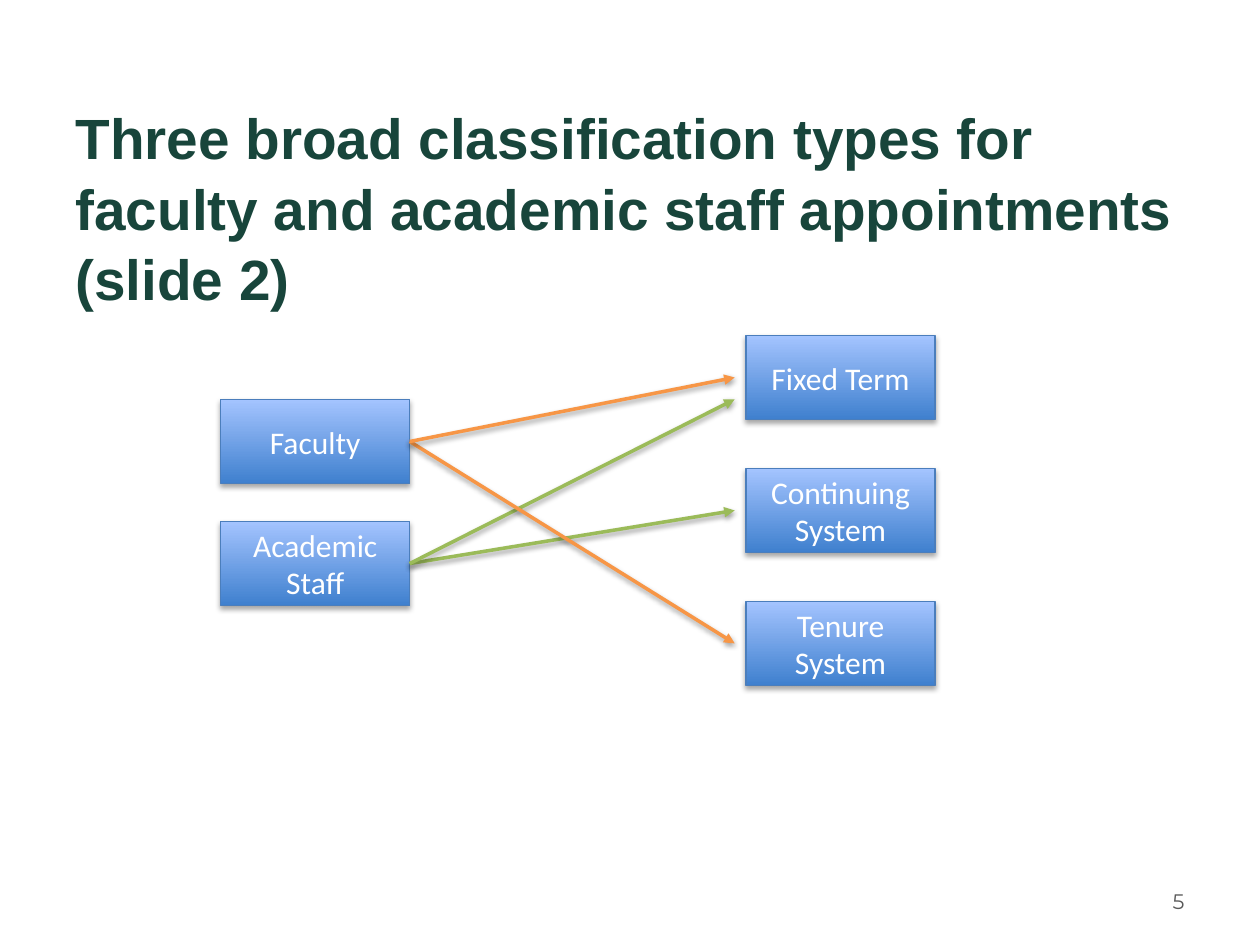
from lxml.etree import SubElement
from pptx import Presentation
from pptx.dml.color import RGBColor
from pptx.enum.shapes import MSO_CONNECTOR as CONNECTOR, MSO_SHAPE as SHAPE
from pptx.enum.text import MSO_ANCHOR as ANCHOR, PP_ALIGN as ALIGN
from pptx.oxml.ns import qn
from pptx.util import Cm, Pt

GREEN_TITLE = RGBColor(0x18, 0x45, 0x3B)
GRAY = RGBColor(0x59, 0x59, 0x59)
WHITE = RGBColor(0xFF, 0xFF, 0xFF)
BLUE_DARK = RGBColor(0x3F, 0x80, 0xCE)
BLUE_LIGHT = RGBColor(0xA4, 0xC4, 0xFF)
BLUE_LINE = RGBColor(0x4B, 0x7E, 0xBC)
ORANGE = RGBColor(0xF7, 0x96, 0x46)
GREEN = RGBColor(0x9B, 0xBB, 0x59)

TITLE = "Three broad classification types for faculty and academic staff appointments (slide 2)"
PAGE_NUMBER = "5"
# left, first top, pitch, labels
COLUMNS = [
    (4.45, 8.05, 2.46, ["Faculty", "Academic Staff"]),
    (15.04, 6.76, 2.68, ["Fixed Term", "Continuing System", "Tenure System"]),
]
ARROWS = [
    ("Academic Staff", "Continuing System", GREEN, 0),
    ("Academic Staff", "Fixed Term", GREEN, 0.44),
    ("Faculty", "Tenure System", ORANGE, 0),
    ("Faculty", "Fixed Term", ORANGE, 0),
]
BOX_WIDTH, BOX_HEIGHT = 3.81, 1.7
ARROW_GAP = 0.23


def add_text(frame, text, font_name, size, color, align, bold=False):
    frame.word_wrap = True
    frame.vertical_anchor = ANCHOR.MIDDLE
    paragraph = frame.paragraphs[0]
    paragraph.alignment = align
    run = paragraph.add_run()
    run.text = text
    run.font.name = font_name
    run.font.size = Pt(size)
    run.font.bold = bold
    run.font.color.rgb = color
    return paragraph


def add_shadow(shape, distance, opacity):
    effects = SubElement(shape._element.spPr, qn("a:effectLst"))
    shadow = SubElement(effects, qn("a:outerShdw"), blurRad=str(Pt(3.1)),
                        dist=str(Pt(distance)), dir="5400000", rotWithShape="0")
    black = SubElement(shadow, qn("a:srgbClr"), val="000000")
    SubElement(black, qn("a:alpha"), val=str(opacity * 1000))


def add_box(slide, label, left, top):
    box = slide.shapes.add_shape(SHAPE.FLOWCHART_PROCESS, Cm(left), Cm(top),
                                 Cm(BOX_WIDTH), Cm(BOX_HEIGHT))
    box.fill.gradient()
    box.fill.gradient_angle = 90
    for stop, color in zip(box.fill.gradient_stops, (BLUE_DARK, BLUE_LIGHT)):
        stop.color.rgb = color
    box.line.color.rgb = BLUE_LINE
    box.line.width = Pt(0.75)
    add_shadow(box, 1.8, 35)
    add_text(box.text_frame, label, "Calibri", 18, WHITE, ALIGN.CENTER)
    return box


def add_arrow(slide, source, target, color, offset):
    end_y = target.top + target.height // 2 + Cm(offset)
    arrow = slide.shapes.add_connector(CONNECTOR.STRAIGHT, source.left + source.width, source.top,
                                       target.left - Cm(ARROW_GAP), end_y)
    arrow.begin_connect(source, 3)
    arrow.line.color.rgb = color
    arrow.line.width = Pt(2)
    SubElement(arrow.line._get_or_add_ln(), qn("a:tailEnd"), type="triangle")
    add_shadow(arrow, 1.6, 38)


def main():
    presentation = Presentation()
    presentation.slide_width, presentation.slide_height = Cm(25.4), Cm(19.05)
    slide = presentation.slides.add_slide(presentation.slide_layouts[5])

    title = slide.shapes.title
    title.left, title.top, title.width, title.height = Cm(1.27), Cm(3.48), Cm(22.86), Cm(1.35)
    heading = add_text(title.text_frame, TITLE, "Arial", 32.4, GREEN_TITLE, ALIGN.LEFT, bold=True)
    heading.line_spacing = 1.04

    number = slide.shapes.add_textbox(Cm(18.21), Cm(17.65), Cm(5.92), Cm(1.02))
    add_text(number.text_frame, PAGE_NUMBER, "Montserrat", 12, GRAY, ALIGN.RIGHT)

    boxes = {}
    for left, first_top, pitch, labels in COLUMNS:
        for row, label in enumerate(labels):
            boxes[label] = add_box(slide, label, left, first_top + row * pitch)
    for source, target, color, offset in ARROWS:
        add_arrow(slide, boxes[source], boxes[target], color, offset)

    presentation.save("out.pptx")


if __name__ == "__main__":
    main()
